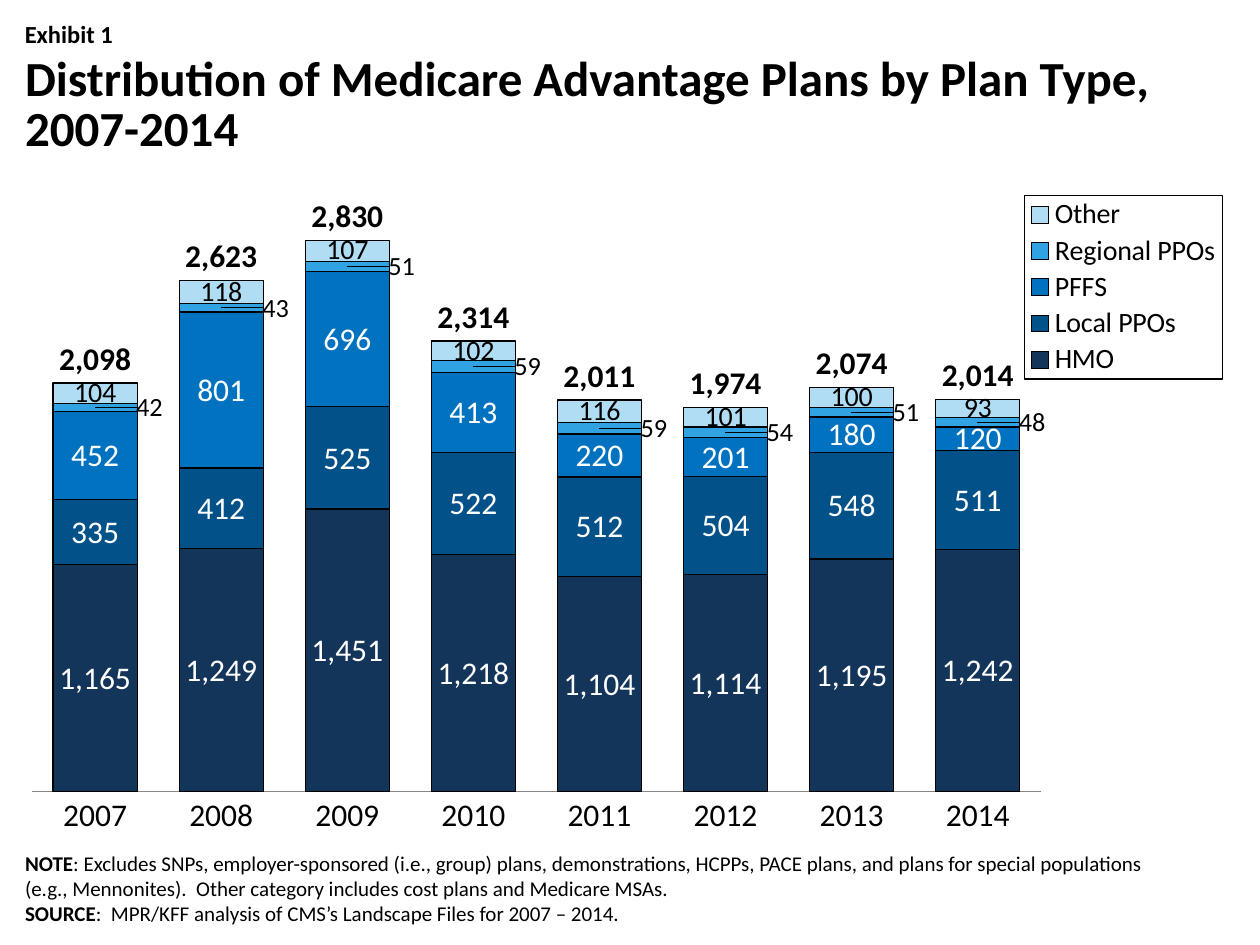
from typing import Any, NamedTuple

from pptx import Presentation
from pptx import util as u
from pptx.chart.data import CategoryChartData
from pptx.dml.color import RGBColor
from pptx.enum import chart as ch, text
from pptx.oxml import parse_xml
from pptx.oxml.ns import nsdecls

BLACK = RGBColor(0, 0, 0)
WHITE = RGBColor(255, 255, 255)
GREY = RGBColor(0x86, 0x86, 0x86)
NAVY = RGBColor(0x13, 0x35, 0x59)
DEEP = RGBColor(0x02, 0x51, 0x89)
BLUE = RGBColor(0x00, 0x72, 0xC0)
SKY = RGBColor(0x31, 0xA3, 0xE3)
PALE = RGBColor(0xB0, 0xDD, 0xF4)
COMMA = "#,##0"


class Band(NamedTuple):
    name: str
    vals: list[int]
    fill: RGBColor
    ink: RGBColor = WHITE
    size: int = 18


class Run(NamedTuple):
    words: str
    bold: bool = False


YEARS = [str(year) for year in range(2007, 2015)]
BANDS = [
    Band("HMO", [1165, 1249, 1451, 1218, 1104, 1114, 1195, 1242], NAVY),
    Band("Local PPOs", [335, 412, 525, 522, 512, 504, 548, 511], DEEP),
    Band("PFFS", [452, 801, 696, 413, 220, 201, 180, 120], BLUE),
    Band("Regional PPOs", [42, 43, 51, 59, 59, 54, 51, 48], SKY, BLACK, 15),
    Band("Other", [104, 118, 107, 102, 116, 101, 100, 93], PALE, BLACK, 16),
]
TOTALS = [sum(vals) for vals in zip(*(band.vals for band in BANDS))]
NOTES = [
    [Run("NOTE", True),
     Run(": Excludes SNPs, employer-sponsored (i.e., group) plans, demonstrations, "
         "HCPPs, PACE plans, and plans for special populations (e.g., Mennonites).  "
         "Other category includes cost plans and Medicare MSAs.")],
    [Run("SOURCE", True),
     Run(":  MPR/KFF analysis of CMS’s Landscape Files for 2007 – 2014.")],
]


def apply(item: Any, **values: Any) -> None:
    for key, value in values.items():
        setattr(item, key, value)


def style(font: Any, size: float, ink: RGBColor = BLACK, bold: bool = False) -> None:
    apply(font, name="Calibri", size=u.Pt(size), bold=bold)
    font.color.rgb = ink


def place(shape: Any, left: float, top: float, width: float, height: float) -> None:
    apply(shape, left=u.Cm(left), top=u.Cm(top), width=u.Cm(width), height=u.Cm(height))


def write(shape: Any, lines: list[list[Run]], size: float, anchor: Any,
          space: float = 1.0) -> None:
    frame = shape.text_frame
    apply(frame, word_wrap=True, auto_size=text.MSO_AUTO_SIZE.NONE, vertical_anchor=anchor)
    for num, line in enumerate(lines):
        para = frame.add_paragraph() if num else frame.paragraphs[0]
        props = para._p.get_or_add_pPr()
        apply(para, alignment=text.PP_ALIGN.LEFT, line_spacing=space,
              space_before=u.Pt(0), space_after=u.Pt(0))
        props.set("marL", "0")
        props.set("indent", "0")
        props.append(parse_xml(f"<a:buNone {nsdecls('a')}/>"))
        for part in line:
            run = para.add_run()
            run.text = part.words
            style(run.font, size, bold=part.bold)


def layout(inner: bool = False, **sides: float) -> Any:
    target = '<c:layoutTarget val="inner"/>' if inner else ""
    modes = "".join(f'<c:{key}Mode val="edge"/>' for key in "xy") if "w" in sides else ""
    nums = "".join(f'<c:{key} val="{val}"/>' for key, val in sides.items())
    return parse_xml(f"<c:layout {nsdecls('c')}><c:manualLayout>{target}{modes}{nums}"
                     "</c:manualLayout></c:layout>")


def label(series: Any, size: float, ink: RGBColor, bold: bool = False) -> Any:
    tags = series.data_labels
    apply(tags, show_value=True, number_format=COMMA, number_format_is_linked=False)
    style(tags.font, size, ink, bold)
    return tags


def draw_band(series: Any, band: Band) -> None:
    series.format.fill.solid()
    series.format.fill.fore_color.rgb = band.fill
    series.format.line.color.rgb = BLACK
    series.format.line.width = u.Pt(0.75)
    label(series, band.size, band.ink)


def shift_tags(series: Any, band: Band) -> None:
    """Move the labels of a thin band to the right of its columns."""
    for num in range(len(band.vals)):
        style(series.points[num].data_label.font, band.size, band.ink)
    for tag in series.data_labels._element.xpath("c:dLbl"):
        tag.insert(1, layout(x=0.044, y=0))


def split_totals(chart: Any) -> None:
    """Turn the last column series into an unseen line that carries the totals."""
    bars = chart.element.xpath("//c:barChart")[0]
    last = bars.xpath("c:ser")[-1]
    for flag in last.xpath("c:invertIfNegative"):
        last.remove(flag)
    line = parse_xml(f'<c:lineChart {nsdecls("c")}><c:grouping val="standard"/>'
                     '<c:varyColors val="0"/></c:lineChart>')
    line.append(last)
    line.append(parse_xml(f'<c:marker {nsdecls("c")} val="1"/>'))
    for axis in bars.xpath("c:axId"):
        line.append(parse_xml(f'<c:axId {nsdecls("c")} val="{axis.get("val")}"/>'))
    bars.addnext(line)
    series = chart.plots[1].series[0]
    series.smooth = False
    series.format.line.fill.background()
    series.marker.style = ch.XL_MARKER_STYLE.NONE
    label(series, 18, BLACK, True).position = ch.XL_LABEL_POSITION.ABOVE


def draw_key(chart: Any) -> None:
    chart.has_legend = True
    apply(chart.legend, position=ch.XL_LEGEND_POSITION.RIGHT, include_in_layout=False)
    style(chart.legend.font, 16)
    key = chart.element.xpath("//c:legend")[0]
    for old in key.xpath("c:layout"):
        key.remove(old)
    key.insert(1, parse_xml(f'<c:legendEntry {nsdecls("c")}><c:idx val="{len(BANDS)}"/>'
                            '<c:delete val="1"/></c:legendEntry>'))
    key.insert(2, layout(x=0.82, y=0.01, w=0.16, h=0.28))
    key.xpath("c:overlay")[0].addnext(parse_xml(
        f'<c:spPr {nsdecls("c", "a")}><a:ln w="9525"><a:solidFill>'
        f'<a:srgbClr val="{BLACK}"/></a:solidFill></a:ln></c:spPr>'))


def draw_chart(slide: Any) -> None:
    data = CategoryChartData(number_format=COMMA)
    data.categories = YEARS
    for band in BANDS:
        data.add_series(band.name, band.vals)
    data.add_series("Series 6", TOTALS)
    chart = slide.shapes.add_chart(ch.XL_CHART_TYPE.COLUMN_STACKED, u.Cm(0.25), u.Cm(3.81),
                                   u.Cm(24.89), u.Cm(13.21), data).chart
    chart.has_title = False
    style(chart.font, 18)
    plot = chart.plots[0]
    apply(plot, gap_width=50, overlap=100, vary_by_categories=False)
    for series, band in zip(plot.series, BANDS):
        draw_band(series, band)
    shift_tags(plot.series[3], BANDS[3])
    split_totals(chart)

    # Axes
    apply(chart.value_axis, visible=False, has_major_gridlines=False,
          minimum_scale=0, maximum_scale=3000)
    chart.category_axis.major_tick_mark = ch.XL_TICK_MARK.NONE
    chart.category_axis.format.line.color.rgb = GREY

    # Plot area and legend
    area = chart.element.xpath("//c:plotArea")[0]
    for old in area.xpath("c:layout"):
        area.remove(old)
    area.insert(0, layout(True, x=0.016, y=0.028, w=0.817, h=0.892))
    draw_key(chart)


def main() -> None:
    deck = Presentation()
    apply(deck, slide_width=u.Cm(25.4), slide_height=u.Cm(19.05))
    slide = deck.slides.add_slide(deck.slide_layouts[1])

    # Headings
    tag = slide.shapes.add_textbox(0, 0, 0, 0)
    place(tag, 0.25, 0.25, 24.89, 0.86)
    write(tag, [[Run("Exhibit 1", True)]], 14, text.MSO_ANCHOR.TOP)
    title = slide.shapes.title
    place(title, 0.25, 1.02, 24.89, 2.54)
    write(title, [[Run("Distribution of Medicare Advantage Plans by Plan Type, 2007-2014",
                       True)]], 28, text.MSO_ANCHOR.TOP, 0.85)

    draw_chart(slide)

    # Notes
    notes = slide.placeholders[1]
    place(notes, 0.25, 17.27, 23.11, 1.52)
    write(notes, NOTES, 12, text.MSO_ANCHOR.BOTTOM)
    deck.save("out.pptx")


if __name__ == "__main__":
    main()
